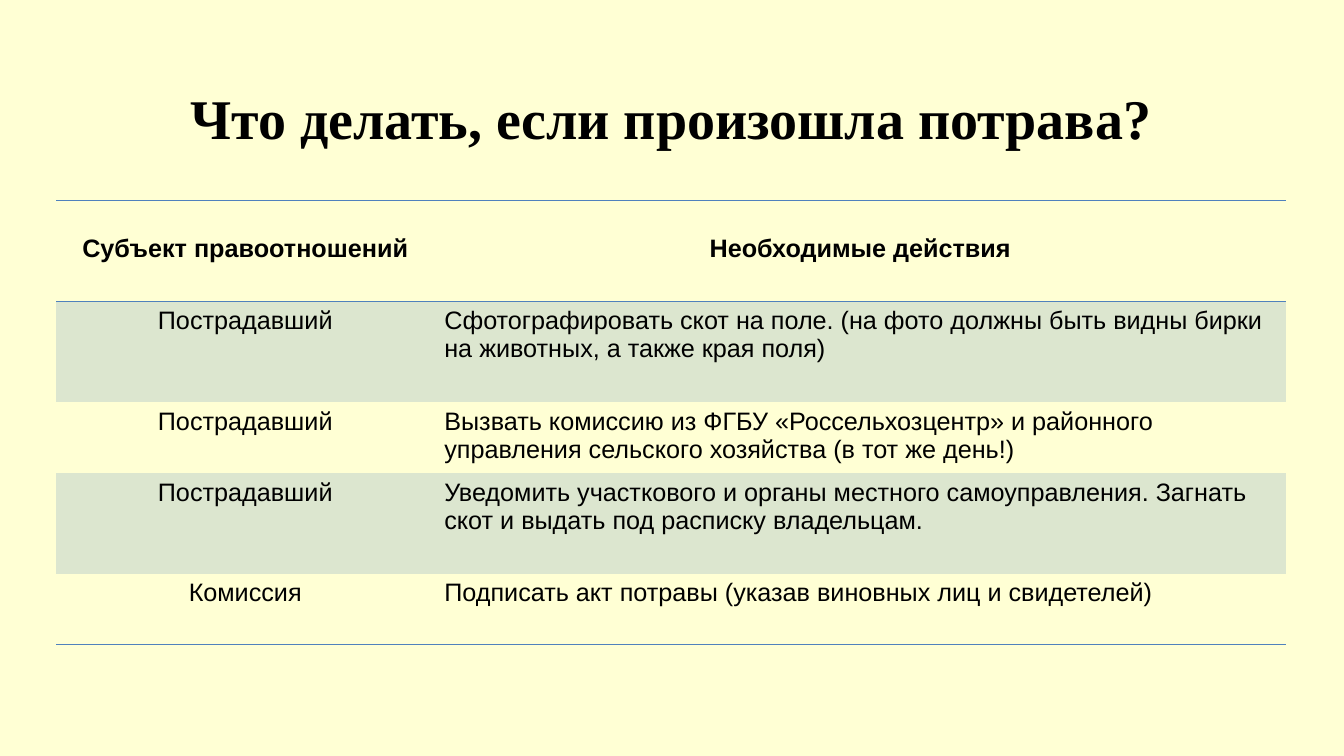
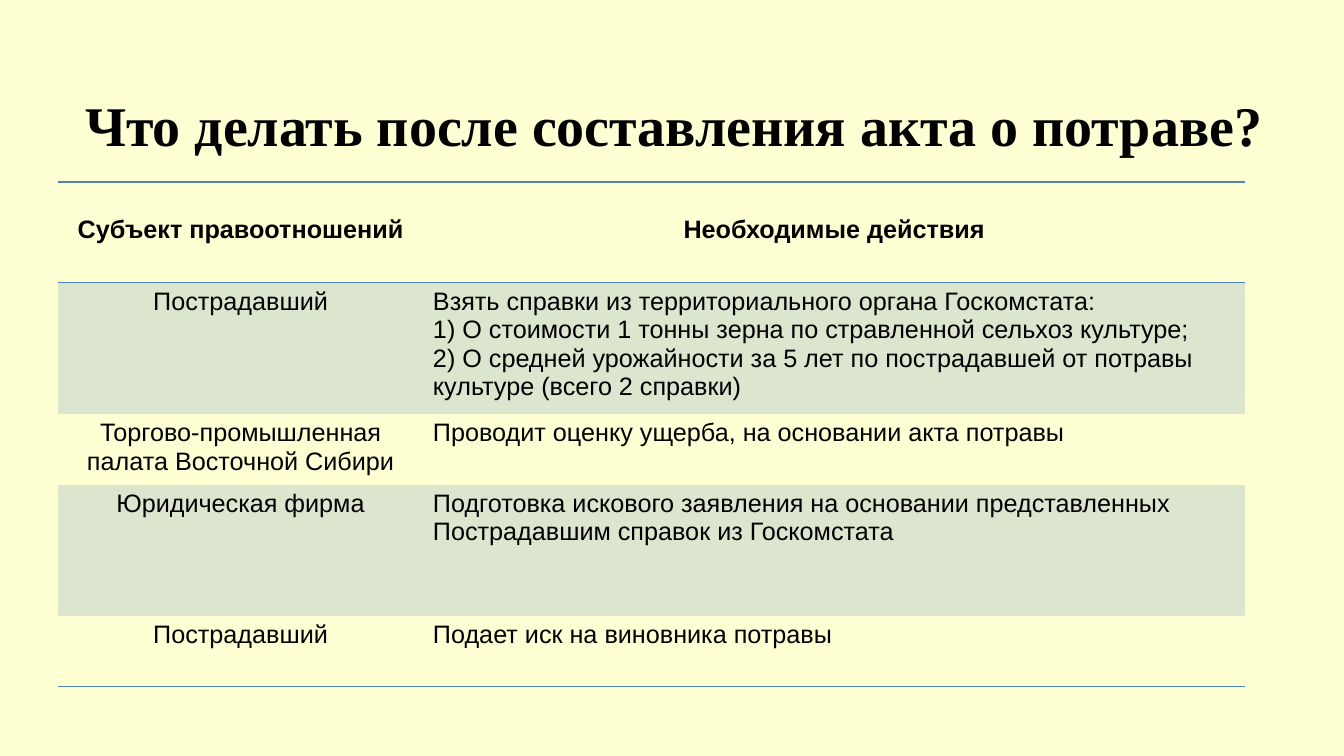
from dataclasses import dataclass

from lxml import etree
from pptx import Presentation, util as u
from pptx.dml.color import RGBColor
from pptx.enum import text as t
from pptx.oxml import ns

COLORS = {"page": "FFFFD4", "ink": "000000", "line": "4F81BD", "band": "DCE6CF"}
TITLE_FONT, TABLE_FONT = "Times New Roman", "Arial"
PLAIN_STYLE = "{2D5ABB26-0587-4C30-8999-92F81FD0307C}"
HEADER = ("Субъект правоотношений", "Необходимые действия")
CENTER, LEFT = t.PP_ALIGN.CENTER, t.PP_ALIGN.LEFT


@dataclass
class Page:
    """Lengths are in points; title_at is left, top, width, height."""
    title: str
    title_at: tuple[float, float, float, float]
    table_at: tuple[float, float]
    columns: tuple[float, float]
    heights: tuple[float, ...]
    steps: list[tuple[str, str]]


PAGES = [
    Page(
        "Что делать, если произошла потрава?",
        (107.3, 56.2, 743.8, 55.4), (40.2, 143.5), (270, 608.5),
        (72, 72, 50.5, 72, 50.5),
        [
            ("Пострадавший",
             "Сфотографировать скот на поле. (на фото должны быть видны бирки "
             "на животных, а также края поля)"),
            ("Пострадавший",
             "Вызвать комиссию из ФГБУ «Россельхозцентр» и районного "
             "управления сельского хозяйства (в тот же день!)"),
            ("Пострадавший",
             "Уведомить участкового и органы местного самоуправления. Загнать "
             "скот и выдать под расписку владельцам."),
            ("Комиссия",
             "Подписать акт потравы (указав виновных лиц и свидетелей)"),
        ],
    ),
    Page(
        "Что делать после составления акта о потраве?",
        (41.8, 61.2, 879, 55.4), (41.6, 130), (260.5, 587.5),
        (72, 93.7, 50.6, 93.7, 50.6),
        [
            ("Пострадавший",
             "Взять справки из территориального органа Госкомстата:\n"
             "1) О стоимости 1 тонны зерна по стравленной сельхоз культуре;\n"
             "2) О средней урожайности за 5 лет по пострадавшей от потравы "
             "культуре (всего 2 справки)"),
            ("Торгово-промышленная палата Восточной Сибири",
             "Проводит оценку ущерба, на основании акта потравы"),
            ("Юридическая фирма",
             "Подготовка искового заявления на основании представленных "
             "Пострадавшим справок из Госкомстата"),
            ("Пострадавший", "Подает иск на виновника потравы"),
        ],
    ),
]


def color(name: str) -> RGBColor:
    return RGBColor.from_string(COLORS[name])


def write(frame, words: str, *, size: float = 18, font: str = TABLE_FONT,
          bold: bool = False, align=LEFT) -> None:
    """Write one paragraph for each line of words."""
    for index, line in enumerate(words.split("\n")):
        para = frame.add_paragraph() if index else frame.paragraphs[0]
        para.alignment = align
        span = para.add_run()
        span.text = line
        span.font.name, span.font.size, span.font.bold = font, u.Pt(size), bold
        span.font.color.rgb = color("ink")


def add_border(cell, side: str) -> None:
    """Draw a rule on the top (lnT) or bottom (lnB) of a cell."""
    line = etree.SubElement(cell._tc.get_or_add_tcPr(), ns.qn(f"a:{side}"),
                            w=str(u.Pt(1)))
    fill = etree.SubElement(line, ns.qn("a:solidFill"))
    etree.SubElement(fill, ns.qn("a:srgbClr"), val=COLORS["line"])


def add_title(slide, page: Page) -> None:
    title = slide.shapes.title
    title.left, title.top, title.width, title.height = map(u.Pt, page.title_at)
    frame = title.text_frame
    frame.word_wrap = True
    frame.auto_size = t.MSO_AUTO_SIZE.NONE
    frame.vertical_anchor = t.MSO_ANCHOR.TOP
    write(frame, page.title, size=40, font=TITLE_FONT, bold=True, align=CENTER)


def add_steps(slide, page: Page) -> None:
    rows = [HEADER, *page.steps]
    left, top = page.table_at
    table = slide.shapes.add_table(
        len(rows), len(HEADER), u.Pt(left), u.Pt(top),
        u.Pt(sum(page.columns)), u.Pt(sum(page.heights))).table
    table.horz_banding = False
    table._tbl.tblPr.find(ns.qn("a:tableStyleId")).text = PLAIN_STYLE
    for column, width in zip(table.columns, page.columns):
        column.width = u.Pt(width)

    for r, (row, height) in enumerate(zip(rows, page.heights)):
        table.rows[r].height = u.Pt(height)
        header = r == 0
        for c, words in enumerate(row):
            cell = table.cell(r, c)
            # Rules above and below the header and under the last row
            if header:
                cell.margin_top = u.Pt(24)
                add_border(cell, "lnT")
            if header or r == len(rows) - 1:
                add_border(cell, "lnB")
            # Every other row is shaded
            if r % 2:
                cell.fill.solid()
                cell.fill.fore_color.rgb = color("band")
            else:
                cell.fill.background()
            write(cell.text_frame, words, bold=header,
                  align=CENTER if header or c == 0 else LEFT)


def main() -> None:
    deck = Presentation()
    deck.slide_width, deck.slide_height = u.Pt(960), u.Pt(540)
    # Shared page colour
    background = deck.slide_master.background.fill
    background.solid()
    background.fore_color.rgb = color("page")
    title_only = deck.slide_layouts[5]
    for page in PAGES:
        slide = deck.slides.add_slide(title_only)
        add_title(slide, page)
        add_steps(slide, page)
    deck.save("out.pptx")


if __name__ == "__main__":
    main()
